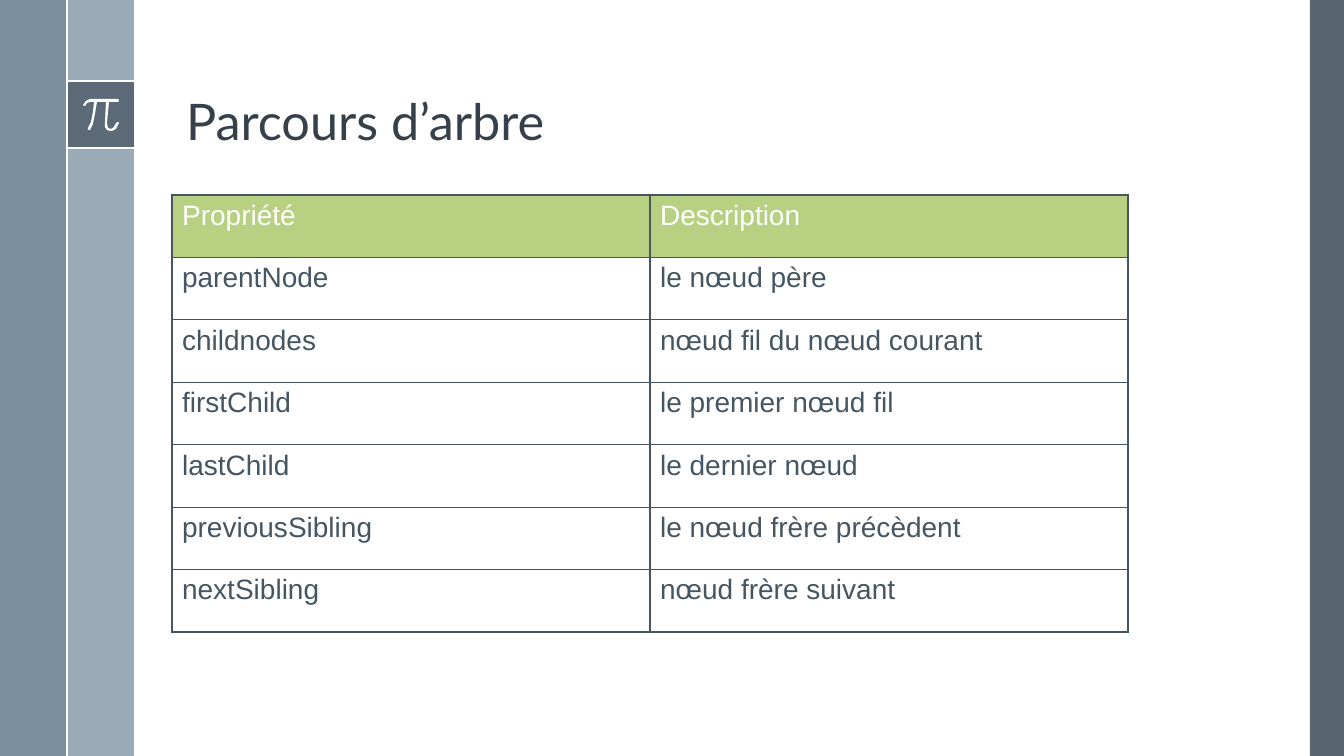
import pptx
import pptx.util
import pptx.dml.color
import pptx.enum.shapes
import pptx.enum.text
import pptx.oxml
import pptx.oxml.ns
from lxml import etree

RGB = pptx.dml.color.RGBColor
SLATE = RGB(0x47, 0x55, 0x62)
STEEL = RGB(0x6A, 0x80, 0x93)
MIST = RGB(0x9B, 0xAA, 0xB7)
WHITE = RGB(0xFF, 0xFF, 0xFF)
TITLE_INK = RGB(0x35, 0x40, 0x4A)
INK = RGB(0x46, 0x55, 0x62)
GREEN = RGB(0xB8, 0xD0, 0x82)

PX = 914400 / 100.8
WIDTH, HEIGHT = 1344, 756

ROWS = [
    ("Propriété", "Description"),
    ("parentNode", "le nœud père"),
    ("childnodes", "nœud fil du nœud courant"),
    ("firstChild", "le premier nœud fil"),
    ("lastChild", "le dernier nœud"),
    ("previousSibling", "le nœud frère précèdent"),
    ("nextSibling", "nœud frère suivant"),
]

# Outline of the pi sign, in px from its top left corner
PI_OUTLINE = [
    (35, 0), (7, 0), (3, 2), (0, 6), (1, 7), (2, 7), (4, 4), (7, 3), (11, 3),
    (10, 13), (8, 23), (5, 29), (5, 31), (7, 31), (10, 25), (12, 15), (14, 3),
    (23, 3), (22, 24), (22, 28), (24, 31), (27, 32), (29, 32), (33, 30),
    (36, 24), (35, 23), (33, 24), (31, 28), (28, 30), (25, 29), (24, 24),
    (26, 3), (35, 3), (36, 2), (36, 1),
]


def px(n):
    return pptx.util.Emu(round(n * PX))


def write(tf, text, font, size, color, line_spacing=None):
    p = tf.paragraphs[0]
    p.alignment = pptx.enum.text.PP_ALIGN.LEFT
    p.line_spacing = line_spacing
    r = p.add_run()
    r.text = text
    r.font.name = font
    r.font.size = pptx.util.Pt(size)
    r.font.bold = False
    r.font.color.rgb = color


def paint(sp, color, alpha=100):
    sp.shadow.inherit = False
    sp.fill.solid()
    sp.fill.fore_color.rgb = color
    sp.line.fill.background()
    if alpha < 100:
        clr = sp.fill._xPr.find(".//" + pptx.oxml.ns.qn("a:srgbClr"))
        etree.SubElement(clr, pptx.oxml.ns.qn("a:alpha"), val=str(alpha * 1000))


def add_rect(s, x, y, w, h, color, alpha=100):
    kind = pptx.enum.shapes.MSO_SHAPE.RECTANGLE
    paint(s.shapes.add_shape(kind, px(x), px(y), px(w), px(h)), color, alpha)


def add_line(s, x1, y1, x2, y2):
    kind = pptx.enum.shapes.MSO_CONNECTOR.STRAIGHT
    line = s.shapes.add_connector(kind, px(x1), px(y1), px(x2), px(y2))
    line.line.color.rgb = WHITE
    line.line.width = pptx.util.Pt(1.5)
    etree.SubElement(line._element.spPr, pptx.oxml.ns.qn("a:effectLst"))


def add_bands(s, x, y, w, h):
    """Two vertical bands with the pi badge on the inner one."""
    band = w // 2
    inner, badge_y = x + band, y + 81
    add_rect(s, inner, y, band, h, MIST)
    add_rect(s, x, y, band, h, STEEL, 88)
    add_rect(s, inner, badge_y, band, band, SLATE, 75)
    for edge in (badge_y, badge_y + band):
        add_line(s, inner, edge, inner + band, edge)
    # Pi sign
    left, top = inner + 16, badge_y + 18
    points = [(left + dx, top + dy) for dx, dy in PI_OUTLINE]
    builder = s.shapes.build_freeform(*points[0], scale=PX)
    builder.add_line_segments(points[1:], close=True)
    paint(builder.convert_to_shape(), WHITE)
    add_line(s, inner, y, inner, y + h)


def add_title(s, x, y, w, h, text):
    sp = s.shapes.title
    sp.left, sp.top, sp.width, sp.height = px(x), px(y), px(w), px(h)
    sp.text_frame.word_wrap = True
    sp.text_frame.vertical_anchor = pptx.enum.text.MSO_ANCHOR.BOTTOM
    write(sp.text_frame, text, "Lato", 36, TITLE_INK, 0.9)


def set_border(cell, side, points):
    tc_pr = cell._tc.get_or_add_tcPr()
    ln = etree.SubElement(tc_pr, pptx.oxml.ns.qn("a:ln" + side),
                          w=str(pptx.util.Pt(points)))
    fill = etree.SubElement(ln, pptx.oxml.ns.qn("a:solidFill"))
    etree.SubElement(fill, pptx.oxml.ns.qn("a:srgbClr"), val=str(INK))


def add_properties_table(s, x, y, w, h, rows):
    n_rows, n_cols = len(rows), len(rows[0])
    table = s.shapes.add_table(n_rows, n_cols, px(x), px(y), px(w), px(h)).table
    table.horz_banding = False
    for i, row in enumerate(rows):
        for j, text in enumerate(row):
            cell = table.cell(i, j)
            # Thick outer frame, thin inner grid
            outer = {"L": j == 0, "R": j == n_cols - 1,
                     "T": i == 0, "B": i == n_rows - 1}
            for side, thick in outer.items():
                set_border(cell, side, 2.25 if thick else 1)
            if i == 0:
                cell.fill.solid()
                cell.fill.fore_color.rgb = GREEN
            else:
                cell.fill.background()
            write(cell.text_frame, text, "Arial", 20, WHITE if i == 0 else INK)


def main():
    prs = pptx.Presentation()
    prs.slide_width, prs.slide_height = px(WIDTH), px(HEIGHT)
    s = prs.slides.add_slide(prs.slide_layouts[5])
    # Side decoration
    add_rect(s, WIDTH - 34, 0, 34, HEIGHT, SLATE, 90)
    add_bands(s, 0, 0, 135 - 1, HEIGHT)
    # Content
    add_title(s, 176, 19, 1078, 137, "Parcours d’arbre")
    add_properties_table(s, 172, 195, 956, 437, ROWS)
    prs.save("out.pptx")


if __name__ == "__main__":
    main()
